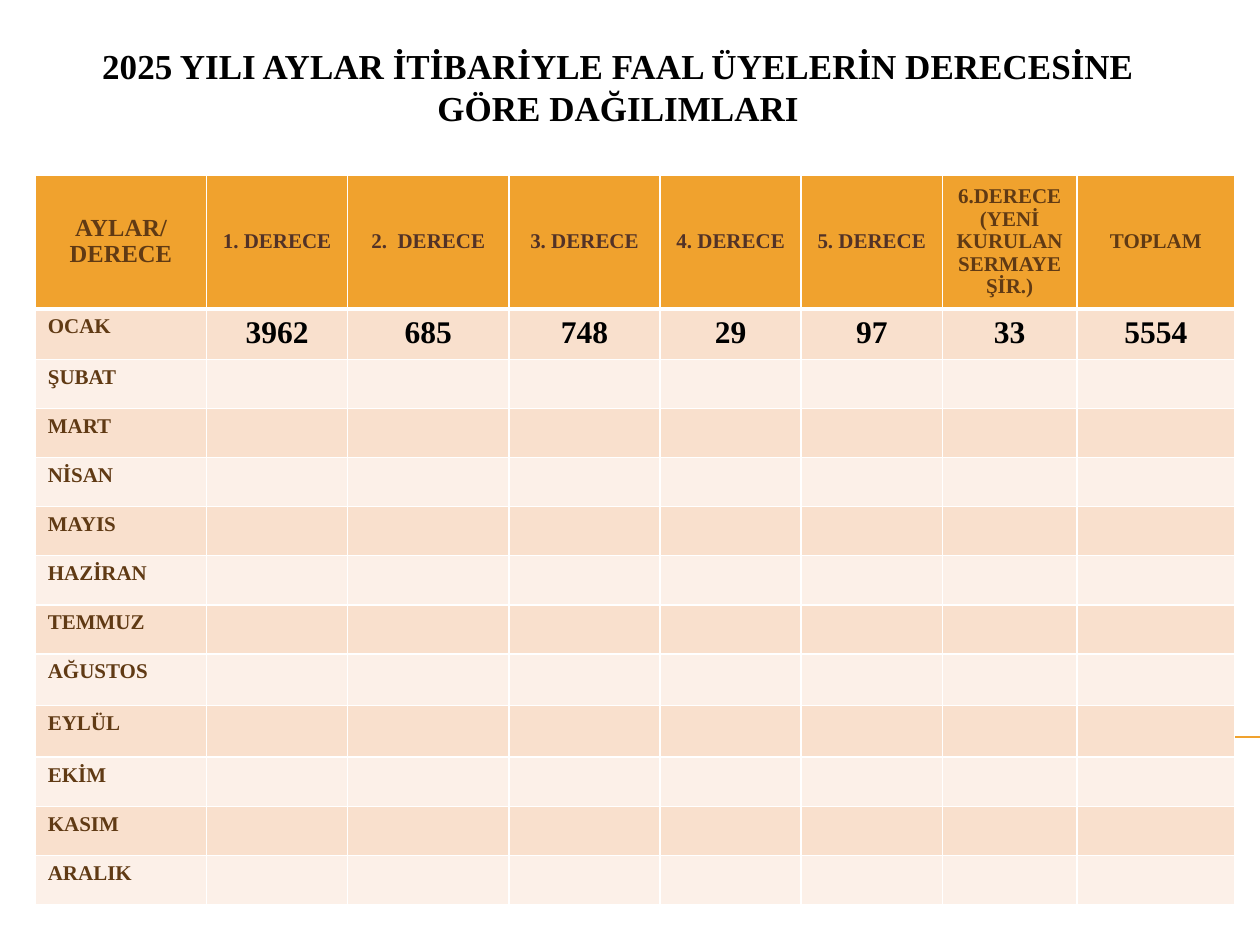
"""Build the slide of active members by degree and month for 2025."""
import lxml.etree
import pptx
import pptx.dml.color
import pptx.enum.shapes
import pptx.enum.text
import pptx.oxml.ns
import pptx.util

BLACK = pptx.dml.color.RGBColor(0x00, 0x00, 0x00)
WHITE = pptx.dml.color.RGBColor(0xFF, 0xFF, 0xFF)
ORANGE = pptx.dml.color.RGBColor(0xF0, 0xA2, 0x2E)
BROWN = pptx.dml.color.RGBColor(0x60, 0x3A, 0x14)
DARK_BROWN = pptx.dml.color.RGBColor(0x52, 0x32, 0x27)
PEACH = pptx.dml.color.RGBColor(0xF9, 0xE0, 0xCD)
LIGHT_PEACH = pptx.dml.color.RGBColor(0xFC, 0xF0, 0xE8)

HEADERS = ["AYLAR/ DERECE", "1. DERECE", "2.  DERECE", "3. DERECE", "4. DERECE",
           "5. DERECE", "6.DERECE (YENİ KURULAN SERMAYE ŞİR.)", "TOPLAM"]
MONTHS = ["OCAK", "ŞUBAT", "MART", "NİSAN", "MAYIS", "HAZİRAN", "TEMMUZ",
          "AĞUSTOS", "EYLÜL", "EKİM", "KASIM", "ARALIK"]
JANUARY = ["3962", "685", "748", "29", "97", "33", "5554"]
COLUMN_WIDTHS = [1.36, 1.12, 1.28, 1.2, 1.12, 1.12, 1.07, 1.25]
ROW_HEIGHTS = [1.06] + [0.39] * 7 + [0.41] * 2 + [0.39] * 3
LEFT, TOP = 0.28, 1.39


def write_text(frame, text, size=12, color=BROWN, centered=True, spacing=None):
    paragraph = frame.paragraphs[0]
    alignment = pptx.enum.text.PP_ALIGN
    paragraph.alignment = alignment.CENTER if centered else alignment.LEFT
    paragraph.line_spacing = spacing
    run = paragraph.add_run()
    run.text = text
    run.font.name = "Times New Roman"
    run.font.size = pptx.util.Pt(size)
    run.font.bold = True
    run.font.color.rgb = color


def format_cell(cell, fill, bottom_width):
    properties = cell._tc.get_or_add_tcPr()
    for side, width in (("lnL", 1), ("lnR", 1), ("lnT", 1), ("lnB", bottom_width)):
        border = lxml.etree.SubElement(properties, pptx.oxml.ns.qn(f"a:{side}"),
                                       w=str(pptx.util.Pt(width)))
        solid = lxml.etree.SubElement(border, pptx.oxml.ns.qn("a:solidFill"))
        lxml.etree.SubElement(solid, pptx.oxml.ns.qn("a:srgbClr"), val=str(WHITE))
    cell.fill.solid()
    cell.fill.fore_color.rgb = fill


presentation = pptx.Presentation()
presentation.slide_width = pptx.util.Inches(10)
presentation.slide_height = pptx.util.Inches(7.5)
slide = presentation.slides.add_slide(presentation.slide_layouts[6])

line_y = presentation.slide_height * 0.78
rule = slide.shapes.add_connector(
    pptx.enum.shapes.MSO_CONNECTOR.STRAIGHT,
    pptx.util.Inches(0.56), int(line_y), presentation.slide_width, int(line_y))
rule.line.color.rgb = ORANGE
rule.line.width = pptx.util.Pt(0.75)
lxml.etree.SubElement(rule._element.spPr, pptx.oxml.ns.qn("a:effectLst"))

title = slide.shapes.add_textbox(
    pptx.util.Inches(LEFT), pptx.util.Inches(0.29),
    pptx.util.Inches(9.25), pptx.util.Inches(0.63))
title.text_frame.word_wrap = True
title.text_frame.margin_top = pptx.util.Inches(0.06)
write_text(title.text_frame,
           "2025 YILI AYLAR İTİBARİYLE FAAL ÜYELERİN DERECESİNE GÖRE DAĞILIMLARI",
           size=20, color=BLACK, spacing=pptx.util.Pt(24))

table = slide.shapes.add_table(
    len(ROW_HEIGHTS), len(COLUMN_WIDTHS),
    pptx.util.Inches(LEFT), pptx.util.Inches(TOP),
    pptx.util.Inches(sum(COLUMN_WIDTHS)), pptx.util.Inches(sum(ROW_HEIGHTS))).table
for column, width in zip(table.columns, COLUMN_WIDTHS):
    column.width = pptx.util.Inches(width)
for row, height in zip(table.rows, ROW_HEIGHTS):
    row.height = pptx.util.Inches(height)

for index, header in enumerate(HEADERS):
    cell = table.cell(0, index)
    format_cell(cell, ORANGE, 3)
    cell.vertical_anchor = pptx.enum.text.MSO_ANCHOR.MIDDLE
    write_text(cell.text_frame, header, size=14 if index == 0 else 12,
               color=DARK_BROWN if 1 <= index <= 5 else BROWN, spacing=0.96)

for row_index, month in enumerate(MONTHS, start=1):
    for column_index in range(len(HEADERS)):
        cell = table.cell(row_index, column_index)
        format_cell(cell, PEACH if row_index % 2 else LIGHT_PEACH, 1)
        if column_index == 0:
            write_text(cell.text_frame, month, centered=False)
        elif row_index == 1:
            write_text(cell.text_frame, JANUARY[column_index - 1], size=18, color=BLACK)
        else:
            cell.margin_top = cell.margin_bottom = 0

presentation.save("out.pptx")
